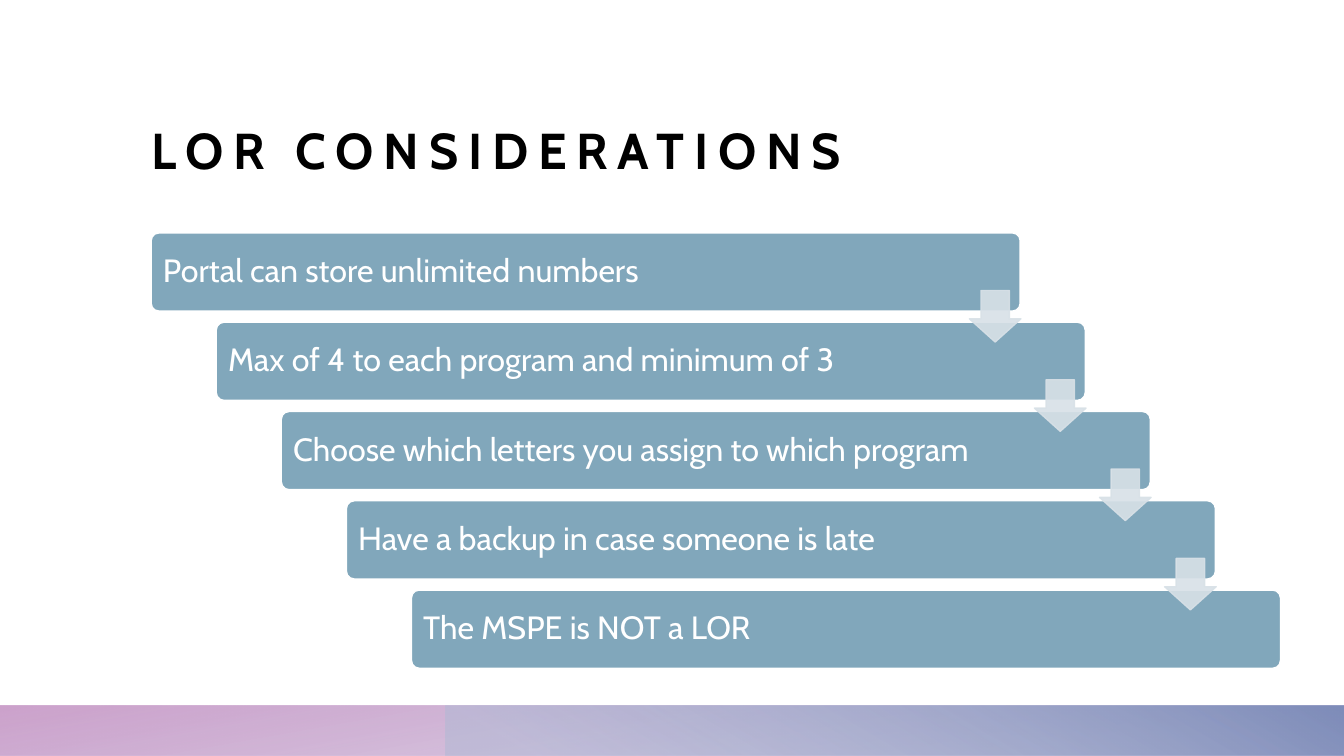
from dataclasses import dataclass

import pptx
import pptx.dml.color
import pptx.enum.dml
import pptx.enum.shapes
import pptx.enum.text
import pptx.oxml
import pptx.oxml.ns
import pptx.util

Cm = pptx.util.Cm
Pt = pptx.util.Pt
Kind = pptx.enum.shapes.MSO_SHAPE
Anchor = pptx.enum.text.MSO_ANCHOR
qn = pptx.oxml.ns.qn


@dataclass(frozen=True)
class Theme:
    font: str = "Cabin"
    head: float = 36
    body: float = 23
    ink: str = "000000"
    pale: str = "FFFFFF"
    bar: str = "81A7BB"
    arrow: str = "D8E1E7"
    # Each stop: position, colour, opacity in percent
    pink: tuple = ((0.14, "A27FBA", 28), (1, "C492C3", 85))
    blue: tuple = ((0.09, "B2BBD6", 55), (0.99, "7F8DBA", 100))


THEME = Theme()
STEPS = (
    "Portal can store unlimited numbers",
    "Max of 4 to each program and minimum of 3",
    "Choose which letters you assign to which program",
    "Have a backup in case someone is late",
    "The MSPE is NOT a LOR",
)
SHIFT = 1.64
DROP = 2.25


def rgb(code):
    return pptx.dml.color.RGBColor.from_string(code)


def fade(node, amount):
    """Set the opacity, in percent, of each colour under node."""
    for color in node.iter(qn("a:srgbClr")):
        alpha = pptx.oxml.parse_xml(
            '<a:alpha xmlns:a="http://schemas.openxmlformats.org/'
            f'drawingml/2006/main" val="{amount * 1000}"/>'
        )
        color.append(alpha)


def add_box(slide, kind, left, top, width, height):
    box = slide.shapes.add_shape(kind, Cm(left), Cm(top), Cm(width), Cm(height))
    box.shadow.inherit = False
    return box


def paint(box, code):
    box.fill.solid()
    box.fill.fore_color.rgb = rgb(code)


def edge(box, code):
    box.line.color.rgb = rgb(code)
    box.line.width = Pt(1)


def style(para, size, code, bold=False):
    font = para.font
    font.name = THEME.font
    font.size = Pt(size)
    font.bold = bold
    font.color.rgb = rgb(code)
    para.alignment = pptx.enum.text.PP_ALIGN.LEFT


def add_band(slide, left, width, stops, angle, turn=0):
    """Add a mirrored gradient strip along the foot of the slide."""
    band = add_box(slide, Kind.RECTANGLE, left, 17.78, width, 1.27)
    band.line.fill.background()
    band.rotation = turn
    band.element.spPr.find(qn("a:xfrm")).set("flipH", "1")
    band.fill.gradient()
    band.fill.gradient_angle = angle
    nodes = band.element.spPr.iter(qn("a:gs"))
    for stop, node, (place, code, amount) in zip(
        band.fill.gradient_stops, nodes, stops
    ):
        stop.position = place
        stop.color.rgb = rgb(code)
        fade(node, amount)


def add_title(slide, text):
    title = slide.shapes.title
    title.left, title.top = Cm(3.81), Cm(1.09)
    title.width, title.height = Cm(28.45), Cm(3.43)
    frame = title.text_frame
    frame.margin_left = frame.margin_right = 0
    frame.margin_top = frame.margin_bottom = 0
    frame.vertical_anchor = Anchor.BOTTOM
    frame.auto_size = pptx.enum.text.MSO_AUTO_SIZE.NONE
    frame.text = text
    para = frame.paragraphs[0]
    style(para, THEME.head, THEME.ink, bold=True)
    para.runs[0].font._element.set("spc", "700")


def add_step(slide, row, text):
    bar = add_box(slide, Kind.ROUNDED_RECTANGLE,
                  3.81 + row * SHIFT, 5.87 + row * DROP, 21.9, 1.97)
    bar.adjustments[0] = 0.1
    paint(bar, THEME.bar)
    edge(bar, THEME.pale)
    frame = bar.text_frame
    frame.word_wrap = True
    frame.margin_left = Cm(0.24)
    frame.vertical_anchor = Anchor.MIDDLE
    frame.text = text
    para = frame.paragraphs[0]
    para.line_spacing = 0.9
    style(para, THEME.body, THEME.pale)


def add_arrow(slide, row):
    arrow = add_box(slide, Kind.DOWN_ARROW,
                    24.43 + row * SHIFT, 7.32 + row * DROP, 1.3, 1.3)
    arrow.adjustments[0] = 0.55
    arrow.adjustments[1] = 0.45
    paint(arrow, THEME.arrow)
    edge(arrow, THEME.arrow)
    fade(arrow.element.spPr, 90)


def main():
    deck = pptx.Presentation()
    deck.slide_width, deck.slide_height = Cm(33.87), Cm(19.05)
    slide = deck.slides.add_slide(deck.slide_layouts[5])
    add_band(slide, 0, 33.87, THEME.pink, 260, turn=180)
    add_band(slide, 11.22, 22.65, THEME.blue, 120)
    add_title(slide, "LOR CONSIDERATIONS")
    for row, text in enumerate(STEPS):
        add_step(slide, row, text)
    for row in range(len(STEPS) - 1):
        add_arrow(slide, row)
    deck.save("out.pptx")


if __name__ == "__main__":
    main()
